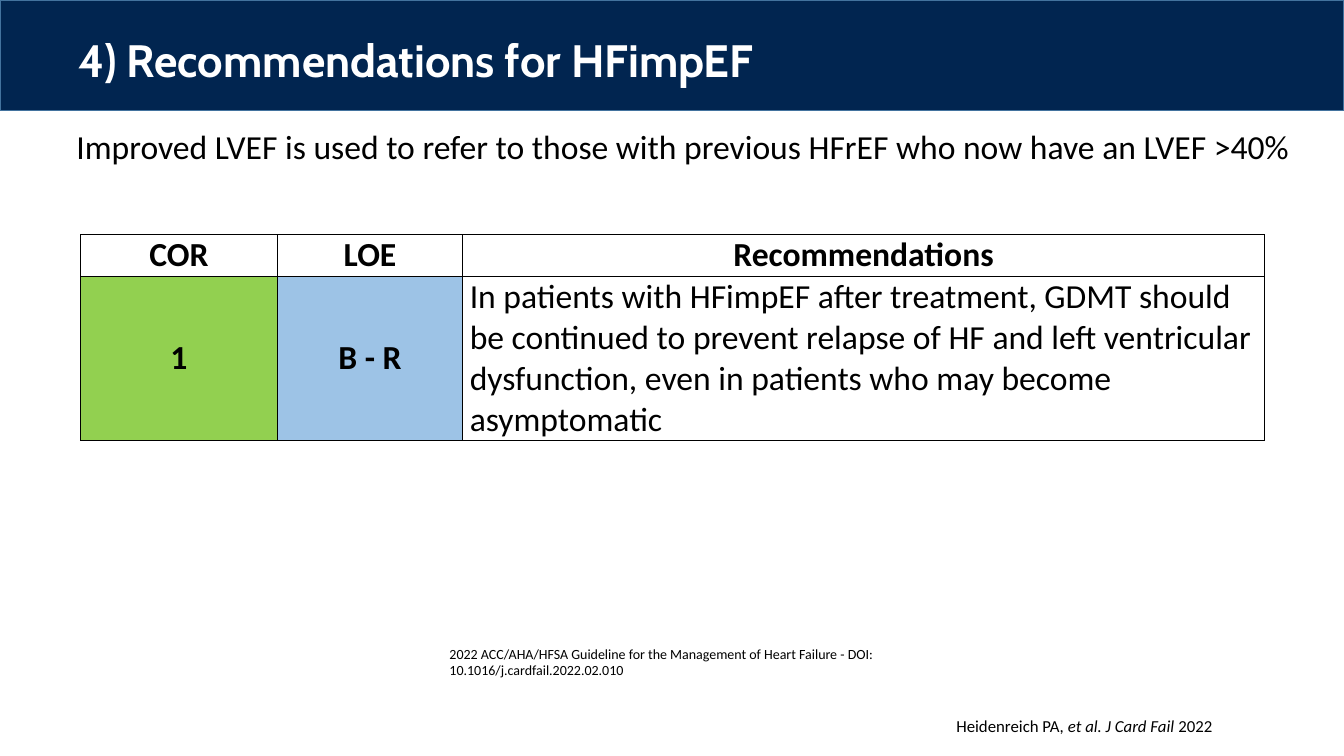
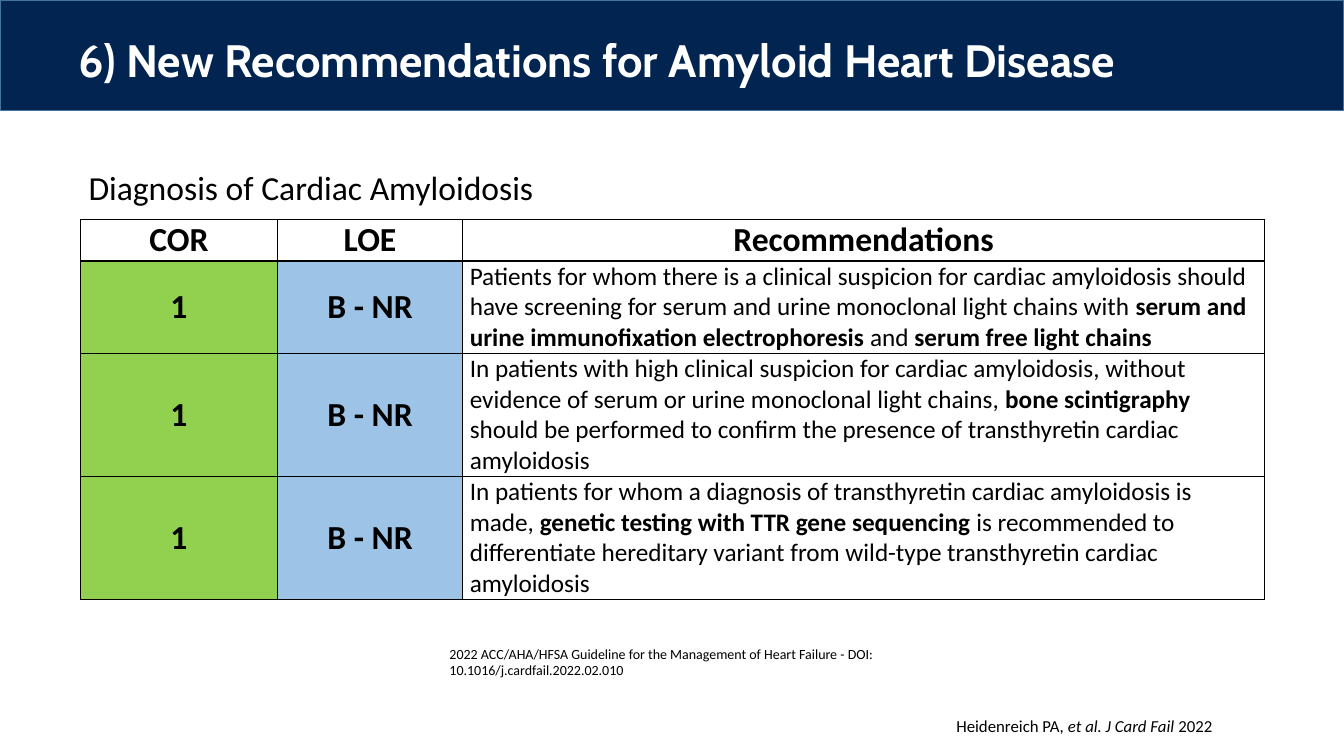
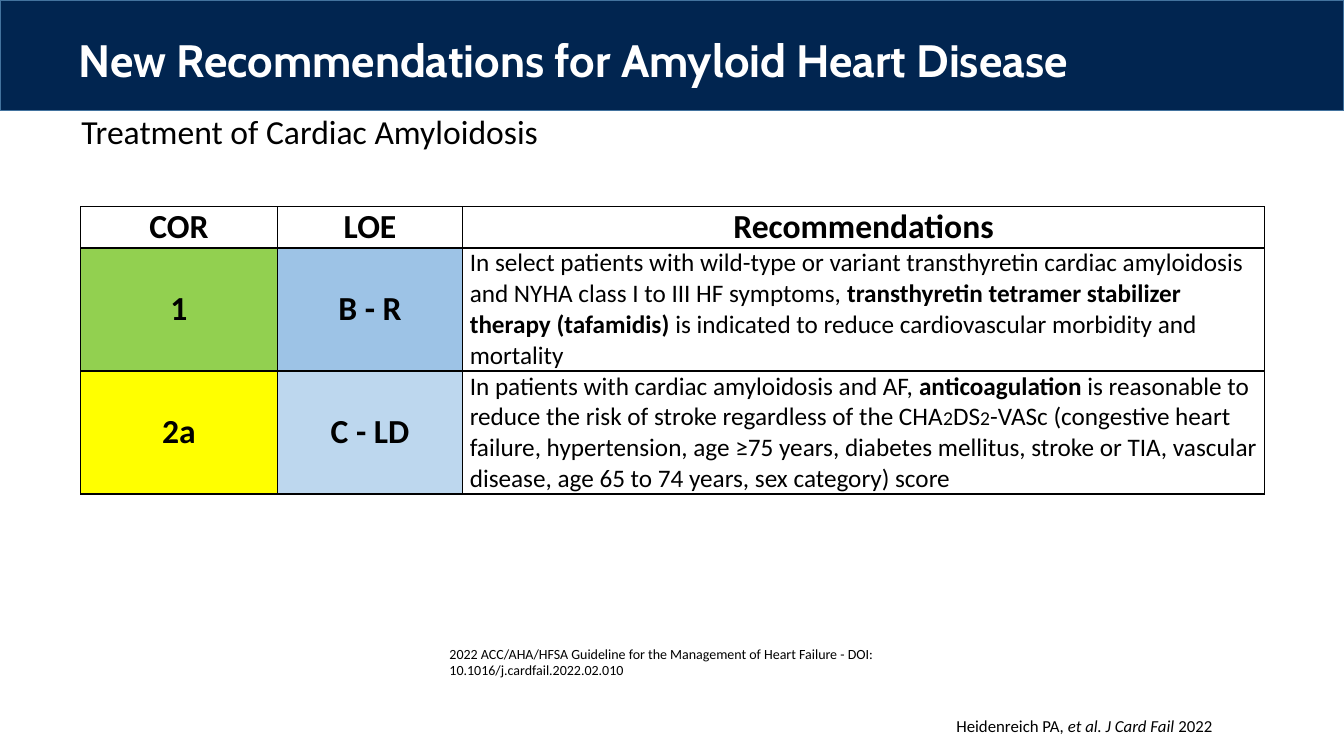
from lxml import etree
from pptx import Presentation
from pptx.dml.color import RGBColor
from pptx.enum.shapes import MSO_SHAPE
from pptx.enum.text import MSO_ANCHOR, MSO_AUTO_SIZE, PP_ALIGN
from pptx.oxml.ns import qn
from pptx.util import Inches, Pt

LEFT, CENTER = PP_ALIGN.LEFT, PP_ALIGN.CENTER
TOP, MIDDLE = MSO_ANCHOR.TOP, MSO_ANCHOR.MIDDLE
RECTANGLE = MSO_SHAPE.RECTANGLE
NO_AUTOFIT = MSO_AUTO_SIZE.NONE

NAVY, BAND_EDGE = "012550", "43739E"
WHITE, BLACK = "FFFFFF", "000000"
CLASS_FILLS = {"1": "92D050", "2a": "FFFF00"}
EVIDENCE_FILLS = {"B - R": "9DC3E6", "B - NR": "9DC3E6", "C - LD": "BDD7EE"}

SLIDE_WIDTH, SLIDE_HEIGHT = 13.33, 7.5
TITLE_BOX = (0.78, 0.38, 11.8, 0.81)
SOURCE_BOX = (2.36, 6.35, 7.83, 0.27)
CITATION_BOX = (9.27, 7.07, 2.97, 0.48)
TABLE_LEFT = 0.8
COLUMN_WIDTHS = (1.95, 1.84, 7.95)
HEADER_HEIGHT = 0.41
HEADINGS = ("COR", "LOE", "Recommendations")

BOLD, ITALIC, SUBSCRIPT = {"bold": True}, {"italic": True}, {"size": 14}
SOURCE = ("2022 ACC/AHA/HFSA Guideline for the Management of Heart Failure - DOI: "
          "10.1016/j.cardfail.2022.02.010")
CITATION = [("Heidenreich PA, ", {}), ("et al. J Card Fail ", ITALIC), ("2022", {})]

# Each row: class, level of evidence, row height, text size, spans of text
SLIDES = [
    {
        "title": "4) Recommendations for HFimpEF",
        "subtitle": "Improved LVEF is used to refer to those with previous HFrEF "
                    "who now have an LVEF >40%",
        "subtitle_box": (0.66, 1.2, 12.6, 0.5),
        "table_top": 2.33,
        "rows": [
            ("1", "B - R", 1.63, 24, [
                ("In patients with HFimpEF after treatment, GDMT should be continued to "
                 "prevent relapse of HF and left ventricular dysfunction, even in patients "
                 "who may become asymptomatic", {})]),
        ],
    },
    {
        "title": "6) New Recommendations for Amyloid Heart Disease",
        "subtitle": "Diagnosis of Cardiac Amyloidosis",
        "subtitle_box": (0.78, 1.61, 4.8, 0.5),
        "table_top": 2.18,
        "rows": [
            ("1", "B - NR", 0.91, 18, [
                ("Patients for whom there is a clinical suspicion for cardiac amyloidosis "
                 "should have screening for serum and urine monoclonal light chains with ", {}),
                ("serum and urine immunofixation electrophoresis ", BOLD),
                ("and ", {}),
                ("serum free light chains", BOLD)]),
            ("1", "B - NR", 1.22, 18, [
                ("In patients with high clinical suspicion for cardiac amyloidosis, without "
                 "evidence of serum or urine monoclonal light chains,", {}),
                (" bone scintigraphy ", BOLD),
                ("should be performed to confirm the presence of transthyretin cardiac "
                 "amyloidosis", {})]),
            ("1", "B - NR", 1.22, 18, [
                ("In patients for whom a diagnosis of transthyretin cardiac amyloidosis "
                 "is made, ", {}),
                ("genetic testing with TTR gene sequencing ", BOLD),
                ("is recommended to differentiate hereditary variant from wild-type "
                 "transthyretin cardiac amyloidosis", {})]),
        ],
    },
    {
        "title": "New Recommendations for Amyloid Heart Disease",
        "subtitle": "Treatment of Cardiac Amyloidosis",
        "subtitle_box": (0.71, 1.05, 4.8, 0.5),
        "table_top": 2.05,
        "rows": [
            ("1", "B - R", 1.22, 18, [
                ("In select patients with wild-type or variant transthyretin cardiac "
                 "amyloidosis and NYHA class I to III HF symptoms, ", {}),
                ("transthyretin tetramer stabilizer therapy (tafamidis) ", BOLD),
                ("is indicated to reduce cardiovascular morbidity and mortality", {})]),
            ("2a", "C - LD", 1.22, 18, [
                ("In patients with cardiac amyloidosis and AF, ", {}),
                ("anticoagulation", BOLD),
                (" is reasonable to reduce the risk of stroke regardless of the CHA", {}),
                ("2", SUBSCRIPT), ("DS", {}), ("2", SUBSCRIPT),
                ("-VASc (congestive heart failure, hypertension, age ≥75 years, diabetes "
                 "mellitus, stroke or TIA, vascular disease, age 65 to 74 years, sex "
                 "category) score", {})]),
        ],
    },
]


def color(value):
    return RGBColor.from_string(value)


def inches(box):
    return [Inches(length) for length in box]


def write(para, text, size=24, font="Calibri", fill=BLACK, bold=False, italic=False,
          align=LEFT, spacing=None):
    """Add text, a string or a list of (string, format changes), to a paragraph."""
    para.alignment = align
    if spacing:
        para.line_spacing = spacing
    spans = [(text, {})] if isinstance(text, str) else text
    for words, changes in spans:
        look = {"size": size, "bold": bold, "italic": italic, **changes}
        span = para.add_run()
        span.text = words
        span.font.name = font
        span.font.size = Pt(look["size"])
        span.font.bold = look["bold"]
        span.font.italic = look["italic"]
        span.font.color.rgb = color(fill)


def set_margins(target, left, top, right, bottom):
    target.margin_left, target.margin_top, target.margin_right, target.margin_bottom = inches(
        (left, top, right, bottom))


def add_text(slide, box, text, indent=0, **look):
    frame = slide.shapes.add_textbox(*inches(box)).text_frame
    frame.word_wrap = True
    para = frame.paragraphs[0]
    if indent:
        para._p.get_or_add_pPr().set("marL", str(Inches(indent)))
    write(para, text, **look)


def style_layout(layout, slide):
    """Give the layout its title place and its band, which is drawn on a slide first."""
    title = layout.placeholders[0]
    title.left, title.top, title.width, title.height = inches(TITLE_BOX)
    frame = title.text_frame
    frame.vertical_anchor = TOP
    frame.auto_size = NO_AUTOFIT
    set_margins(frame, 0, 0, 0.1, 0)

    band = slide.shapes.add_shape(RECTANGLE, *inches((0, 0, SLIDE_WIDTH, 1.1)))
    band.shadow.inherit = False
    band.fill.solid()
    band.fill.fore_color.rgb = color(NAVY)
    band.line.color.rgb = color(BAND_EDGE)
    band.line.width = Pt(1)
    layout.shapes.element.insert(2, band.element)


def add_borders(cell):
    properties = cell._tc.get_or_add_tcPr()
    for side in ("lnL", "lnR", "lnT", "lnB"):
        line = etree.SubElement(properties, qn("a:" + side), w=str(Pt(1)))
        fill = etree.SubElement(line, qn("a:solidFill"))
        etree.SubElement(fill, qn("a:srgbClr"), val=BLACK)


def fill_cell(cell, text, background=WHITE, anchor=MIDDLE, **look):
    add_borders(cell)
    cell.fill.solid()
    cell.fill.fore_color.rgb = color(background)
    cell.vertical_anchor = anchor
    set_margins(cell, 0.07, 0, 0.07, 0)
    write(cell.text_frame.paragraphs[0], text, **look)


def add_recommendations(slide, left, top, rows):
    heights = [HEADER_HEIGHT] + [row[2] for row in rows]
    box = (left, top, sum(COLUMN_WIDTHS), sum(heights))
    table = slide.shapes.add_table(len(heights), len(COLUMN_WIDTHS), *inches(box)).table
    table.first_row = table.horz_banding = False
    for column, width in zip(table.columns, COLUMN_WIDTHS):
        column.width = Inches(width)
    for row, height in zip(table.rows, heights):
        row.height = Inches(height)

    label = {"bold": True, "align": CENTER}
    for index, heading in enumerate(HEADINGS):
        fill_cell(table.cell(0, index), heading, **label)
    for index, (grade, evidence, _, size, text) in enumerate(rows, 1):
        fill_cell(table.cell(index, 0), grade, CLASS_FILLS[grade], **label)
        fill_cell(table.cell(index, 1), evidence, EVIDENCE_FILLS[evidence], **label)
        fill_cell(table.cell(index, 2), text, anchor=TOP, size=size)


def add_references(slide):
    add_text(slide, CITATION_BOX, CITATION, size=12, align=CENTER, spacing=0.9)
    add_text(slide, SOURCE_BOX, SOURCE, indent=2, size=10)


def fill_slide(slide, content):
    write(slide.shapes.title.text_frame.paragraphs[0], content["title"], size=32.4,
          font="Cabin", fill=WHITE, bold=True, spacing=0.9)
    add_recommendations(slide, TABLE_LEFT, content["table_top"], content["rows"])
    add_text(slide, content["subtitle_box"], content["subtitle"])
    add_references(slide)


def main():
    deck = Presentation()
    deck.slide_width, deck.slide_height = inches((SLIDE_WIDTH, SLIDE_HEIGHT))
    layout = deck.slide_layouts.get_by_name("Title Only")
    slides = [deck.slides.add_slide(layout) for _ in SLIDES]
    style_layout(layout, slides[0])
    for slide, content in zip(slides, SLIDES):
        fill_slide(slide, content)
    deck.save("out.pptx")


if __name__ == "__main__":
    main()
